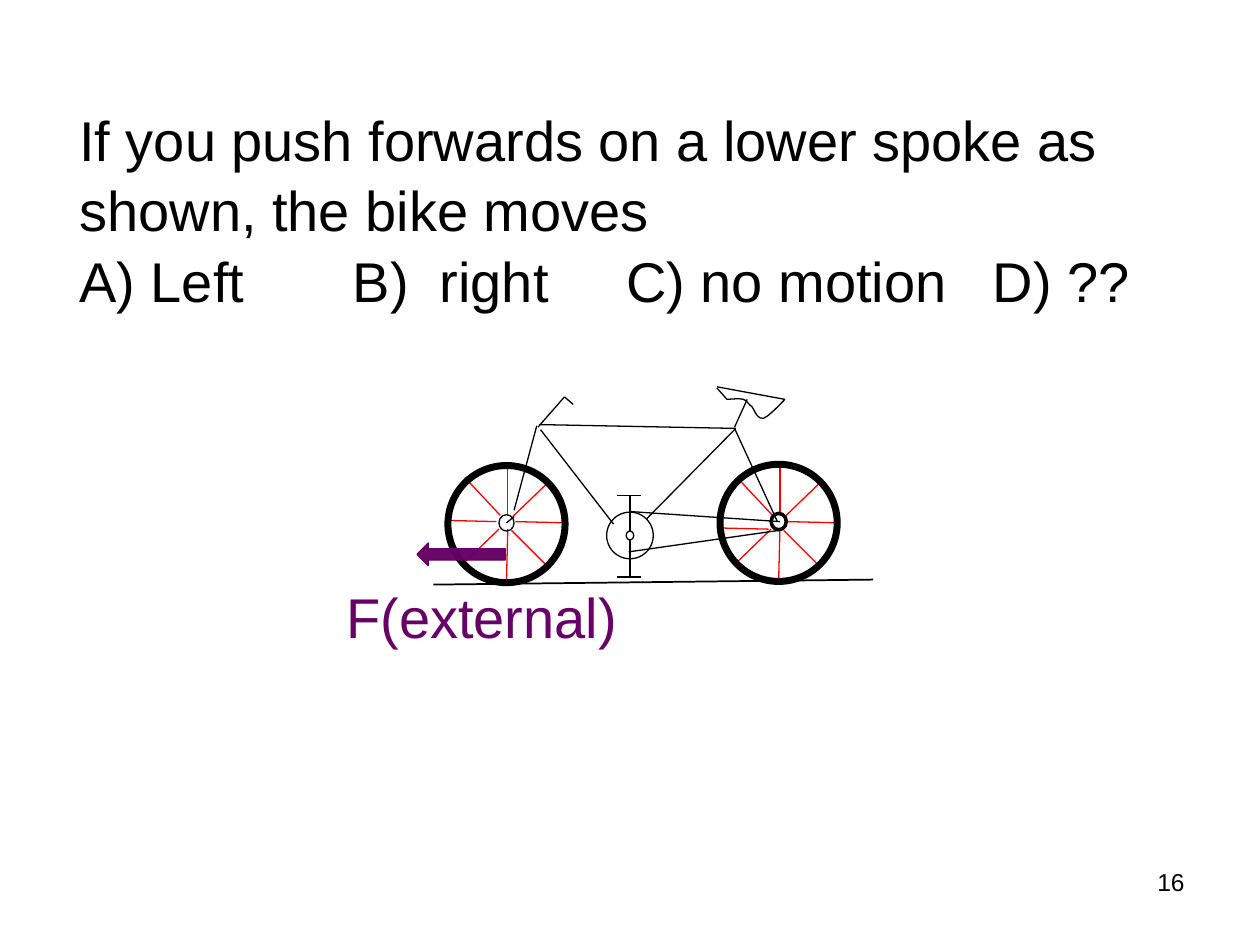
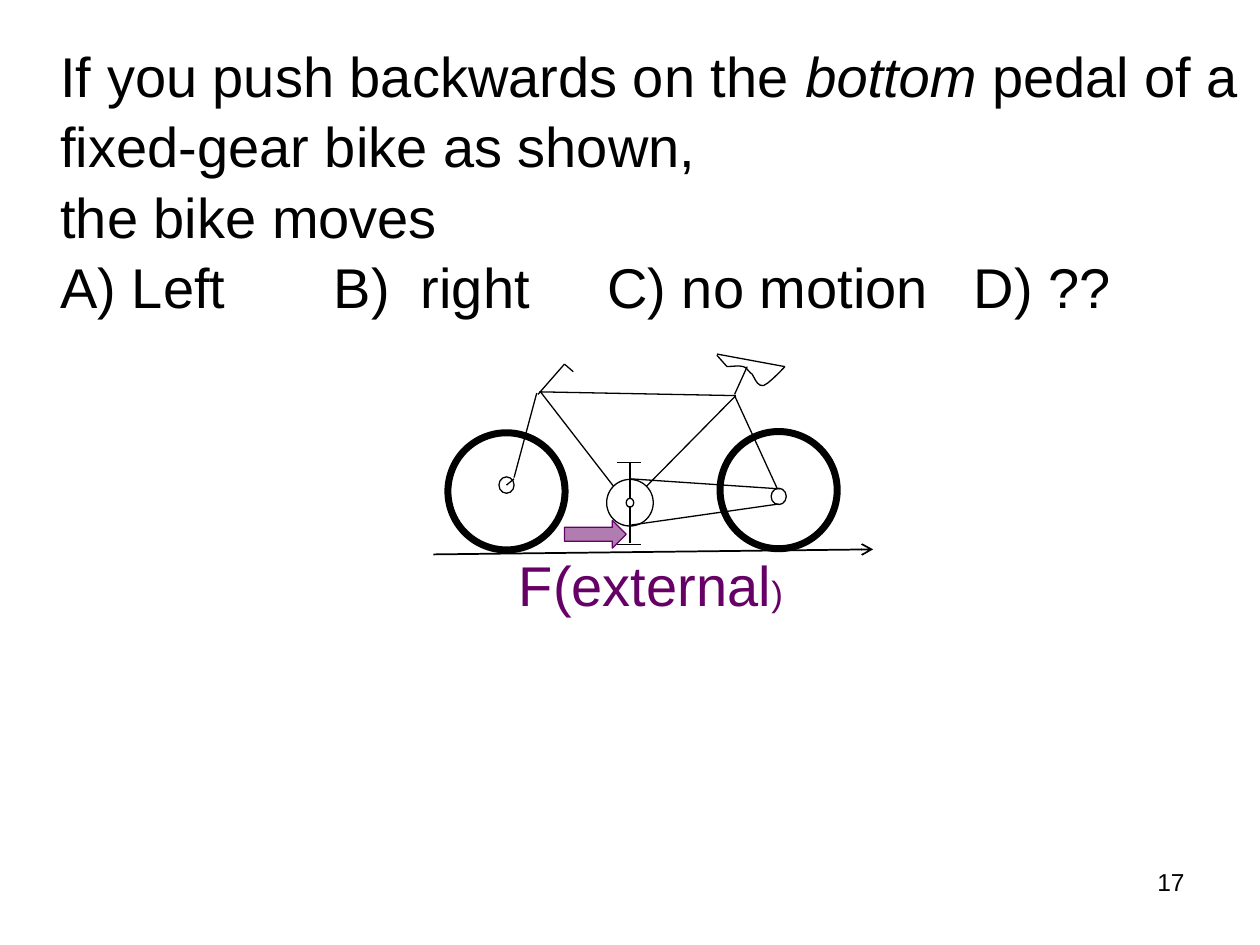
from lxml import etree
from pptx import Presentation
from pptx.dml.color import RGBColor
from pptx.enum.shapes import MSO_CONNECTOR, MSO_SHAPE
from pptx.enum.text import MSO_ANCHOR, MSO_AUTO_SIZE, PP_ALIGN
from pptx.oxml.ns import qn
from pptx.util import Inches, Pt

STRAIGHT = MSO_CONNECTOR.STRAIGHT
OVAL = MSO_SHAPE.OVAL
LEFT_ARROW, RIGHT_ARROW = MSO_SHAPE.LEFT_ARROW, MSO_SHAPE.RIGHT_ARROW
TOP = MSO_ANCHOR.TOP
NO_FIT = MSO_AUTO_SIZE.NONE
LEFT, RIGHT = PP_ALIGN.LEFT, PP_ALIGN.RIGHT

COLORS = {"ink": "000000", "spoke": "FF0000", "force": "660066"}
FONT = "Arial"
THIN, TYRE = 0.75, 4
LINE_SPACING = 1.05
TITLE_ONLY = 5

ANSWERS = "A) Left\tB)\tright\tC) no motion\tD) ??"
ANSWER_TABS = (2.17, 2.86, 4.34, 7.25)

# Bike geometry, in inches from the left end of the ground and the saddle top
WHEEL, HUB = 0.93, (0.12, 0.13)
FRONT_X, REAR_X, AXLE_Y = 0.59, 2.75, 1.07
FRAME = [
    (0.84, 0.30, 2.40, 0.33),  # top tube
    (1.69, 1.05, 2.40, 0.33),  # seat tube
    (0.64, 0.98, 0.82, 0.31),  # fork
    (0.83, 0.32, 1.04, 0.08),  # handlebar
    (1.04, 0.08, 1.11, 0.14),  # grip
    (2.39, 0.33, 2.73, 1.07),  # seat stay
    (2.39, 0.32, 2.49, 0.10),  # seat post
    (2.25, 0.00, 2.79, 0.10),  # saddle top
    (1.56, 0.99, 2.75, 1.07),  # upper chain
    (1.56, 0.86, 1.56, 1.15),  # upper crank
    (1.56, 1.21, 1.56, 1.50),  # lower crank
    (1.46, 0.86, 1.65, 0.86),  # upper pedal
    (1.46, 1.51, 1.65, 1.51),  # lower pedal
]
SADDLE_START = [(2.25, 0.01), (2.33, 0.10)]
SADDLE_CURVES = [
    [(2.35, 0.10), (2.42, 0.09), (2.46, 0.10)],
    [(2.49, 0.11), (2.50, 0.14), (2.53, 0.16)],
    [(2.55, 0.19), (2.57, 0.26), (2.62, 0.25)],
    [(2.66, 0.24), (2.79, 0.10), (2.79, 0.10)],
]
# Spokes from the axle: inner end, outer end
SPOKES = [
    (0, 0.06, -0.01, 0.47), (0, -0.05, 0, -0.46),
    (0.06, 0, 0.47, 0.01), (0.04, -0.04, 0.33, -0.32),
    (-0.07, 0.06, -0.36, 0.34), (0.03, 0.07, 0.32, 0.36),
    (-0.06, -0.05, -0.34, -0.35),
]
LEFT_SPOKE = (-0.09, 0, -0.50, -0.01)


def rgb(name):
    return RGBColor.from_string(COLORS[name])


def add_run(p, text, size=32, color="ink", italic=False):
    r = p.add_run()
    r.text = text
    r.font.name, r.font.size, r.font.italic = FONT, Pt(size), italic
    r.font.color.rgb = rgb(color)


def add_line(s, ends, box, color="ink", width=THIN):
    x, y = box
    x1, y1, x2, y2 = ends
    line = s.shapes.add_connector(STRAIGHT, Inches(x + x1), Inches(y + y1),
                                  Inches(x + x2), Inches(y + y2))
    line.line.color.rgb = rgb(color)
    line.line.width = Pt(width)
    etree.SubElement(line._element.spPr, qn("a:effectLst"))
    return line


def outline(sp, width=THIN):
    sp.shadow.inherit = False
    sp.fill.background()
    sp.line.color.rgb = rgb("ink")
    sp.line.width = Pt(width)


def add_ring(s, cx, cy, size, box, width=THIN):
    """Unfilled ellipse around a centre."""
    w, h = size
    sp = s.shapes.add_shape(OVAL, Inches(box[0] + cx - w / 2), Inches(box[1] + cy - h / 2),
                            Inches(w), Inches(h))
    outline(sp, width)


def add_spokes(s, cx, box, left_drop=0):
    axle = (box[0] + cx, box[1] + AXLE_Y)
    for spoke in SPOKES:
        add_line(s, spoke, axle, "spoke")
    add_line(s, LEFT_SPOKE, (axle[0], axle[1] + left_drop), "spoke")


def add_saddle(s, box):
    points = list(SADDLE_START)
    for c1, c2, end in SADDLE_CURVES:
        start = points[-1]
        for t in (0.2, 0.4, 0.6, 0.8, 1):
            weights = ((1 - t) ** 3, 3 * t * (1 - t) ** 2, 3 * t * t * (1 - t), t ** 3)
            points.append(tuple(sum(w * pt[axis] for w, pt in zip(weights, (start, c1, c2, end)))
                                for axis in (0, 1)))
    points = [(Inches(box[0] + x), Inches(box[1] + y)) for x, y in points]
    builder = s.shapes.build_freeform(*points[0], scale=1.0)
    builder.add_line_segments(points[1:], close=False)
    outline(builder.convert_to_shape())


def add_bike(s, box, down_tube_y, front_hub_y, rear_hub_y, rear_hub_width,
             chain_y, ground_y, spokes=False, ground_arrow=False):
    if spokes:
        add_spokes(s, FRONT_X, box)
        add_spokes(s, REAR_X, box, left_drop=0.06)

    # Frame, drive and saddle
    down_tube = (0.85, down_tube_y, 1.43, down_tube_y + 0.75)
    fork_tip = (0.58, front_hub_y, 0.64, front_hub_y - 0.05)
    lower_chain = (1.55, chain_y + 0.17, 2.74, chain_y)
    for ends in FRAME + [down_tube, fork_tip, lower_chain]:
        add_line(s, ends, box)
    add_saddle(s, box)
    add_ring(s, 1.56, 1.18, (0.37, 0.37), box)
    add_ring(s, 1.56, 1.18, (0.06, 0.07), box)

    # Wheels and hubs
    add_ring(s, 0.58, front_hub_y, HUB, box)
    add_ring(s, 2.74, rear_hub_y, HUB, box, rear_hub_width)
    add_ring(s, 0.58, 1.09, (WHEEL, WHEEL), box, TYRE)
    add_ring(s, 2.74, 1.08, (WHEEL, WHEEL), box, TYRE)

    # Ground
    ground = add_line(s, (0, ground_y, 3.49, ground_y - 0.04), box, width=1)
    if ground_arrow:
        etree.SubElement(ground.line._get_or_add_ln(), qn("a:tailEnd"), type="arrow")


def add_force(s, arrow, box, opacity, label_box, label):
    sp = s.shapes.add_shape(arrow, *map(Inches, box))
    sp.shadow.inherit = False
    sp.fill.solid()
    sp.fill.fore_color.rgb = rgb("force")
    color = sp._element.spPr.find(qn("a:solidFill"))[0]
    etree.SubElement(color, qn("a:alpha"), val=str(opacity * 1000))
    sp.line.color.rgb = rgb("force")
    sp.line.width = Pt(THIN)

    tf = s.shapes.add_textbox(*map(Inches, label_box)).text_frame
    tf.word_wrap = False
    p = tf.paragraphs[0]
    p.line_spacing = LINE_SPACING
    for text, size in label:
        add_run(p, text, size, "force")


def add_question(s, box, lines):
    """Each line is a list of (text, italic) runs; the answers follow."""
    title = s.shapes.title
    title.left, title.top, title.width, title.height = map(Inches, box)
    tf = title.text_frame
    tf.word_wrap, tf.auto_size, tf.vertical_anchor = True, NO_FIT, TOP
    question, answers = tf.paragraphs[0], tf.add_paragraph()
    for p in (question, answers):
        p.alignment, p.line_spacing = LEFT, LINE_SPACING
    for i, line in enumerate(lines):
        if i:
            question.add_line_break()
        for text, italic in line:
            add_run(question, text, italic=italic)

    tabs = etree.SubElement(answers._p.get_or_add_pPr(), qn("a:tabLst"))
    for pos in ANSWER_TABS:
        etree.SubElement(tabs, qn("a:tab"), pos=str(Inches(pos)), algn="l")
    add_run(answers, ANSWERS)


def add_quiz_slide(prs, number, question_box, lines):
    s = prs.slides.add_slide(prs.slide_layouts[TITLE_ONLY])
    add_question(s, question_box, lines)
    tf = s.shapes.add_textbox(Inches(7.17), Inches(6.83), Inches(2.33), Inches(0.52)).text_frame
    tf.word_wrap = True
    tf.paragraphs[0].alignment = RIGHT
    add_run(tf.paragraphs[0], str(number), 14)
    return s


def main():
    prs = Presentation()
    prs.slide_width, prs.slide_height = Inches(10), Inches(7.5)

    # Push on a lower spoke
    s = add_quiz_slide(prs, 16, (0.53, 0.76, 9.4, 1.72), [
        [("If you push forwards on a lower spoke as shown, the bike moves", False)]])
    add_bike(s, (3.44, 3.07), down_tube_y=0.34, front_hub_y=1.08, rear_hub_y=1.07,
             rear_hub_width=2, chain_y=1.14, ground_y=1.57, spokes=True)
    add_force(s, LEFT_ARROW, (3.31, 4.31, 0.7, 0.18), 97,
              (2.65, 4.55, 2.37, 0.64), [("F(external)", 32)])

    # Push on the bottom pedal
    s = add_quiz_slide(prs, 17, (0.38, 0.25, 9.62, 2.26), [
        [("If you push backwards on the ", False), ("bottom", True),
         (" pedal of a fixed-gear bike as shown, ", False)],
        [("the bike moves", False)]])
    add_bike(s, (3.44, 2.81), down_tube_y=0.30, front_hub_y=1.04, rear_hub_y=1.13,
             rear_hub_width=THIN, chain_y=1.19, ground_y=1.59, ground_arrow=True)
    add_force(s, RIGHT_ARROW, (4.48, 4.13, 0.49, 0.22), 51,
              (4.02, 4.29, 2.32, 0.64), [("F(external", 32), (")", 20)])

    prs.save("out.pptx")


if __name__ == "__main__":
    main()
